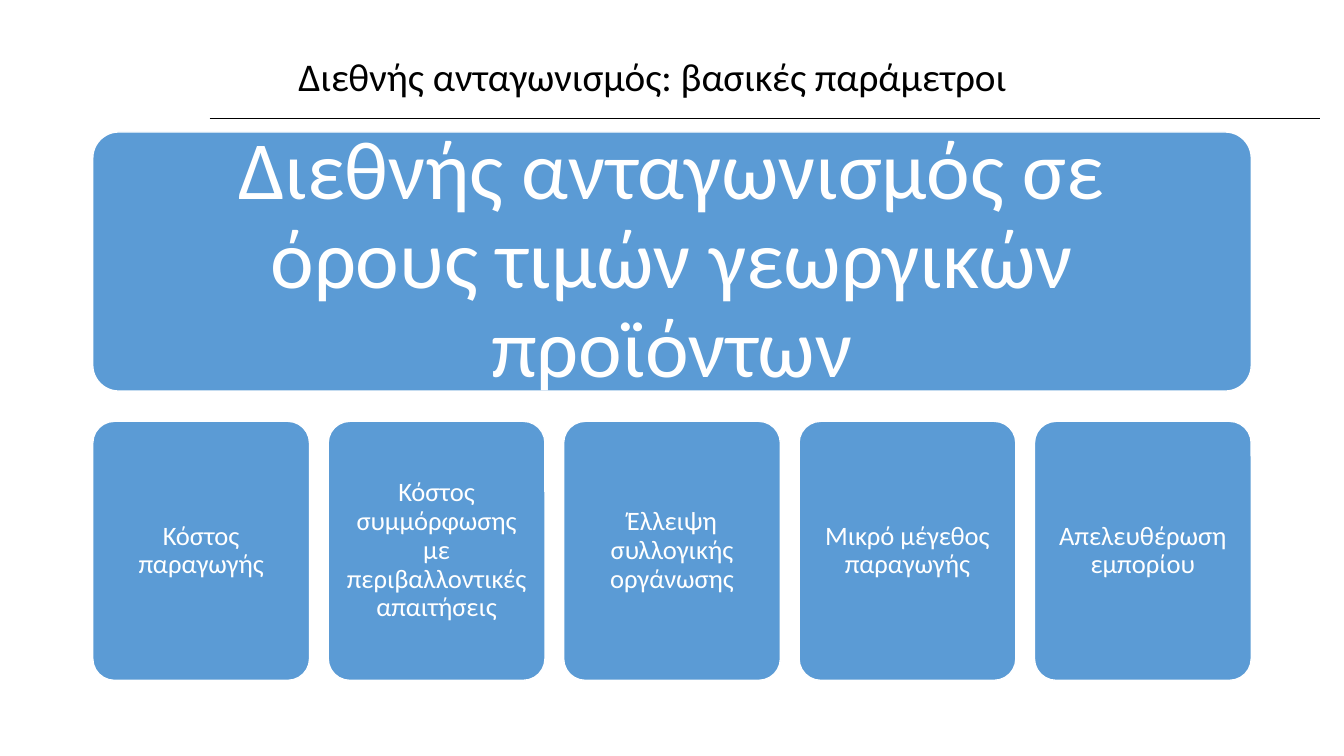
from lxml import etree
from pptx import Presentation
from pptx.dml.color import RGBColor
from pptx.enum.shapes import MSO_CONNECTOR, MSO_SHAPE
from pptx.enum.text import MSO_ANCHOR, MSO_AUTO_SIZE, PP_ALIGN
from pptx.oxml.ns import qn
from pptx.util import Inches, Pt

TITLE = "Διεθνής ανταγωνισμός: βασικές παράμετροι"
BANNER = "Διεθνής ανταγωνισμός σε όρους τιμών γεωργικών προϊόντων"
CARDS = [
    "Κόστος παραγωγής",
    "Κόστος συμμόρφωσης με περιβαλλοντικές απαιτήσεις",
    "Έλλειψη συλλογικής οργάνωσης",
    "Μικρό μέγεθος παραγωγής",
    "Απελευθέρωση εμπορίου",
]
BLUE, WHITE, BLACK = "5B9BD5", "FFFFFF", "000000"
FONT = "Calibri"
ROUND = MSO_SHAPE.ROUNDED_RECTANGLE
STRAIGHT = MSO_CONNECTOR.STRAIGHT
MIDDLE, CENTER = MSO_ANCHOR.MIDDLE, PP_ALIGN.CENTER
NO_FIT = MSO_AUTO_SIZE.NONE

WIDE, HIGH = 13.33, 7.5
LEFT, SPAN = 0.92, 11.49
ROWS = (1.31, 4.18)
TALL, CARD = 2.57, 2.15
STEP = (SPAN - CARD) / (len(CARDS) - 1)
RULE = (2.08, 13.09, 1.17)


def color(code):
    return RGBColor.from_string(code)


def write(shape, text, size, shade):
    """Put one centred paragraph in the shape."""
    frame = shape.text_frame
    frame.word_wrap = True
    frame.auto_size = NO_FIT
    frame.vertical_anchor = MIDDLE
    frame.text = text
    para = frame.paragraphs[0]
    para.alignment = CENTER
    para.line_spacing = 0.9
    para.space_before = Pt(0)
    para.font.name = FONT
    para.font.size = Pt(size)
    para.font.color.rgb = color(shade)
    return frame


def block(slide, text, left, top, width, size, inset):
    box = slide.shapes.add_shape(
        ROUND, Inches(left), Inches(top), Inches(width), Inches(TALL))
    box.adjustments[0] = 0.1
    box.shadow.inherit = False
    box.fill.solid()
    box.fill.fore_color.rgb = color(BLUE)
    box.line.color.rgb = color(WHITE)
    box.line.width = Pt(1)
    frame = write(box, text, size, WHITE)
    frame.margin_left = frame.margin_right = Inches(inset)
    frame.margin_top = frame.margin_bottom = Inches(inset)


def main():
    deck = Presentation()
    deck.slide_width, deck.slide_height = Inches(WIDE), Inches(HIGH)
    slide = deck.slides.add_slide(deck.slide_layouts[5])

    start, end, level = RULE
    rule = slide.shapes.add_connector(
        STRAIGHT, Inches(start), Inches(level), Inches(end), Inches(level))
    rule.line.color.rgb = color(BLACK)
    rule.line.width = Pt(0.5)
    etree.SubElement(rule._element.spPr, qn("a:effectLst"))

    title = slide.shapes.title
    title.left, title.top = Inches(start), Inches(0.4)
    title.width, title.height = Inches(8.78), Inches(level - 0.4)
    write(title, TITLE, 28, BLACK)

    block(slide, BANNER, LEFT, ROWS[0], SPAN, 59, 0.25)
    for col, text in enumerate(CARDS):
        block(slide, text, LEFT + col * STEP, ROWS[1], CARD, 19, 0.08)

    deck.save("out.pptx")


if __name__ == "__main__":
    main()
